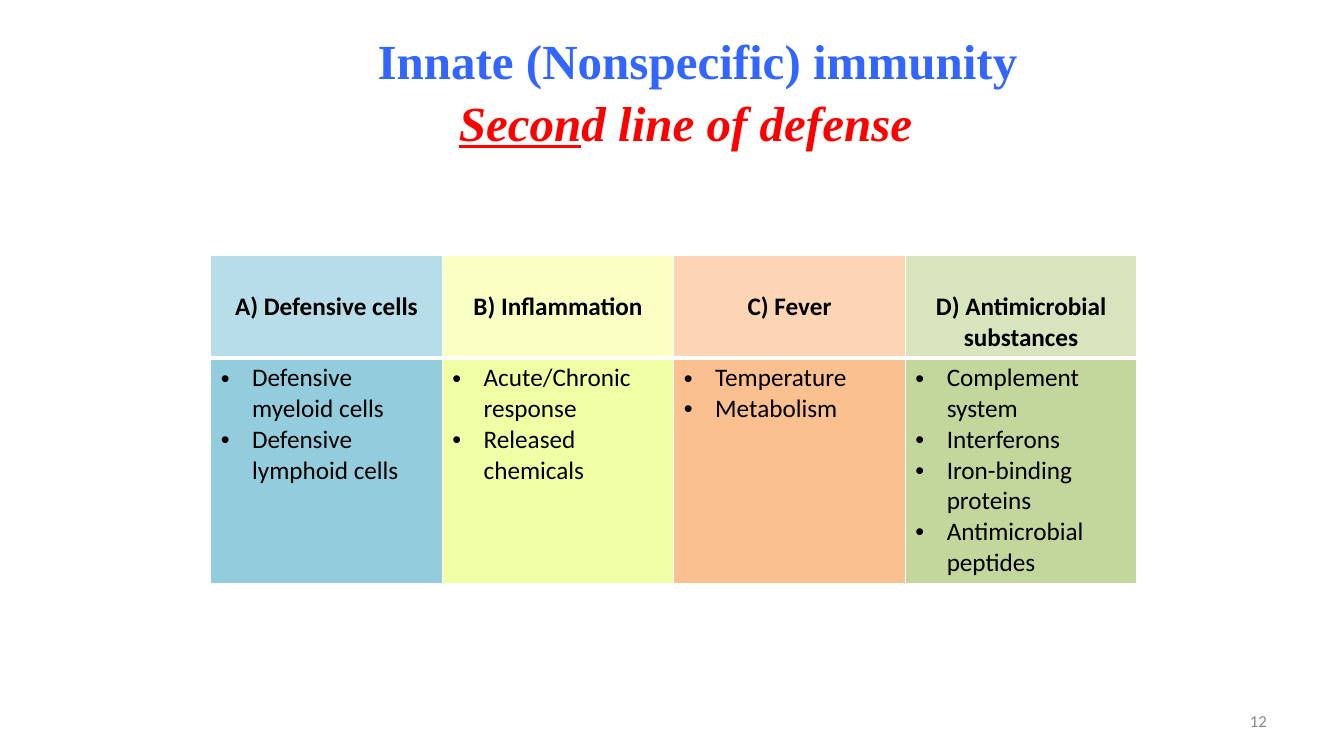
from collections import namedtuple
from dataclasses import dataclass

from lxml import etree
from pptx import Presentation, util as u
from pptx.dml.color import RGBColor
from pptx.enum import text as t
from pptx.oxml.ns import qn

Box = namedtuple("Box", "left top width height")
Column = namedtuple("Column", "heading examples heading_fill examples_fill")


@dataclass(frozen=True)
class Theme:
    title_font: str = "Times New Roman"
    body_font: str = "Calibri"
    title_size: int = 35
    body_size: int = 18
    number_size: int = 12
    topic: str = "3366FF"
    subtopic: str = "FF0000"
    ink: str = "000000"
    muted: str = "8C8C8C"
    rule: str = "FFFFFF"
    thin: int = 1
    thick: int = 3


THEME = Theme()

DEFENSES = [
    Column("A) Defensive cells",
           ["Defensive myeloid cells", "Defensive lymphoid cells"],
           "B7DEE8", "93CDDD"),
    Column("B) Inflammation",
           ["Acute/Chronic response", "Released chemicals"],
           "FAFFC4", "F0FFA3"),
    Column("C) Fever",
           ["Temperature", "Metabolism"],
           "FCD5B5", "FAC090"),
    Column("D) Antimicrobial substances",
           ["Complement system", "Interferons", "Iron-binding proteins",
            "Antimicrobial peptides"],
           "D7E4BD", "C3D69B"),
]


def write(paragraph, wording, font=THEME.body_font, size=THEME.body_size,
          color=THEME.ink, bold=False, italic=False, underline=False,
          align=t.PP_ALIGN.LEFT):
    paragraph.alignment = align
    run = paragraph.add_run()
    run.text = wording
    run.font.name = font
    run.font.size = u.Pt(size)
    run.font.color.rgb = RGBColor.from_string(color)
    run.font.bold = bold
    run.font.italic = italic
    run.font.underline = underline


def indent(paragraph, left, first=0, bullet=None):
    properties = paragraph._p.get_or_add_pPr()
    properties.set("marL", str(u.Cm(left)))
    properties.set("indent", str(u.Cm(first)))
    if bullet:
        etree.SubElement(properties, qn("a:buFont"), typeface="Arial")
        etree.SubElement(properties, qn("a:buChar"), char=bullet)


def place(shape, box):
    shape.left, shape.top, shape.width, shape.height = map(u.Cm, box)


def paint_cell(cell, fill, **edge_widths):
    properties = cell._tc.get_or_add_tcPr()
    for edge in "LRTB":
        width = edge_widths.get(edge, THEME.thin)
        line = etree.SubElement(properties, qn(f"a:ln{edge}"), w=str(u.Pt(width)))
        paint = etree.SubElement(line, qn("a:solidFill"))
        etree.SubElement(paint, qn("a:srgbClr"), val=THEME.rule)
    cell.fill.solid()
    cell.fill.fore_color.rgb = RGBColor.from_string(fill)


def add_heading(slide, box):
    heading = slide.shapes.title
    place(heading, box)
    frame = heading.text_frame
    frame.auto_size = t.MSO_AUTO_SIZE.NONE
    frame.vertical_anchor = t.MSO_ANCHOR.TOP
    style = dict(font=THEME.title_font, size=THEME.title_size, bold=True,
                 align=t.PP_ALIGN.CENTER)
    topic, subtopic = frame.paragraphs[0], frame.add_paragraph()
    write(topic, "Innate (Nonspecific) immunity", color=THEME.topic, **style)
    style.update(color=THEME.subtopic, italic=True)
    write(subtopic, "Secon", underline=True, **style)
    write(subtopic, "d line of defense", **style)
    for paragraph, left in ((topic, 1.27), (subtopic, 0.66)):
        indent(paragraph, left)
        paragraph.space_before = u.Pt(2)


def add_defense_table(slide, box, heading_height=2.57):
    table = slide.shapes.add_table(2, len(DEFENSES), *map(u.Cm, box)).table
    table.horz_banding = False
    table.rows[0].height = u.Cm(heading_height)
    table.rows[1].height = u.Cm(box.height - heading_height)
    for index, defense in enumerate(DEFENSES):
        table.columns[index].width = u.Cm(box.width / len(DEFENSES))
        heading, examples = table.cell(0, index), table.cell(1, index)
        paint_cell(heading, defense.heading_fill, B=THEME.thick)
        paint_cell(examples, defense.examples_fill, T=THEME.thick)
        heading.margin_top = u.Cm(0.91)
        write(heading.text_frame.paragraphs[0], defense.heading, bold=True,
              align=t.PP_ALIGN.CENTER)
        frame = examples.text_frame
        for order, example in enumerate(defense.examples):
            paragraph = frame.add_paragraph() if order else frame.paragraphs[0]
            write(paragraph, example)
            indent(paragraph, 0.79, -0.79, "•")


def add_page_number(slide, box, number):
    frame = slide.shapes.add_textbox(*map(u.Cm, box)).text_frame
    frame.word_wrap = True
    frame.vertical_anchor = t.MSO_ANCHOR.MIDDLE
    write(frame.paragraphs[0], number, size=THEME.number_size,
          color=THEME.muted, align=t.PP_ALIGN.RIGHT)


def main():
    deck = Presentation()
    deck.slide_width, deck.slide_height = u.Cm(33.87), u.Cm(19.05)
    slide = deck.slides.add_slide(deck.slide_layouts.get_by_name("Title Only"))
    add_heading(slide, Box(5, 0.64, 23.9, 4.67))
    add_defense_table(slide, Box(5.31, 6.43, 23.34, 8.13))
    add_page_number(slide, Box(24.28, 17.65, 7.9, 1.02), "12")
    deck.save("out.pptx")


if __name__ == "__main__":
    main()
